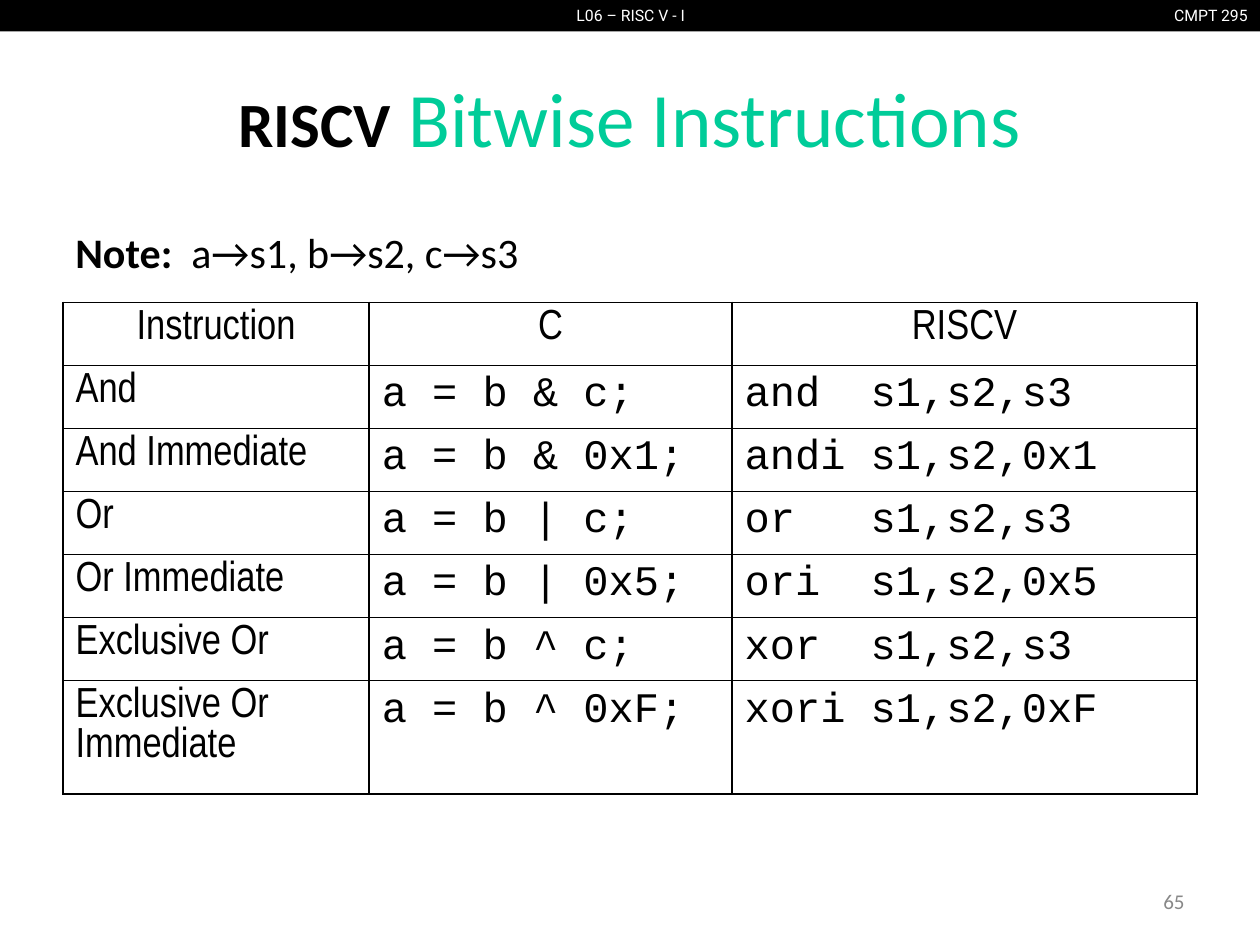
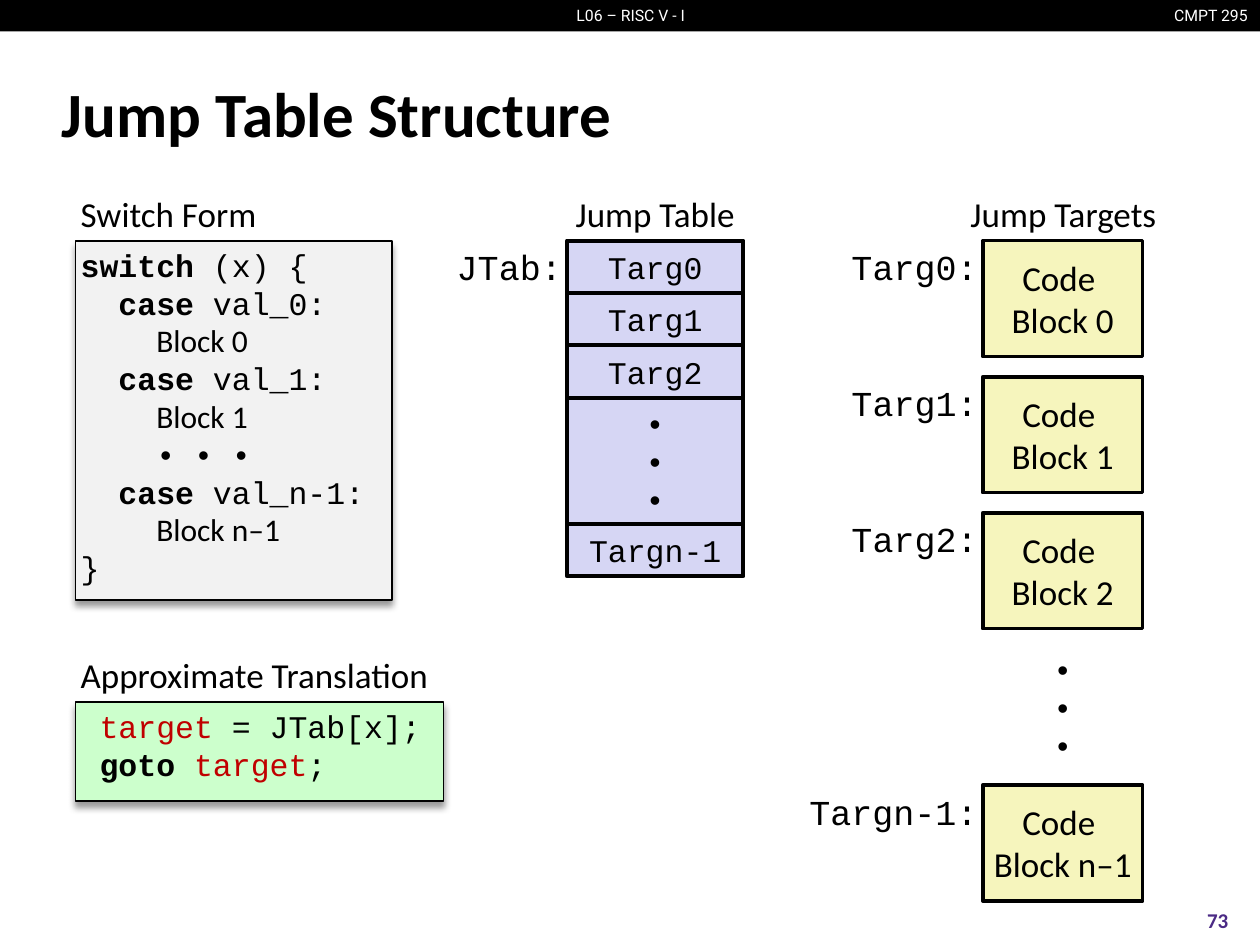
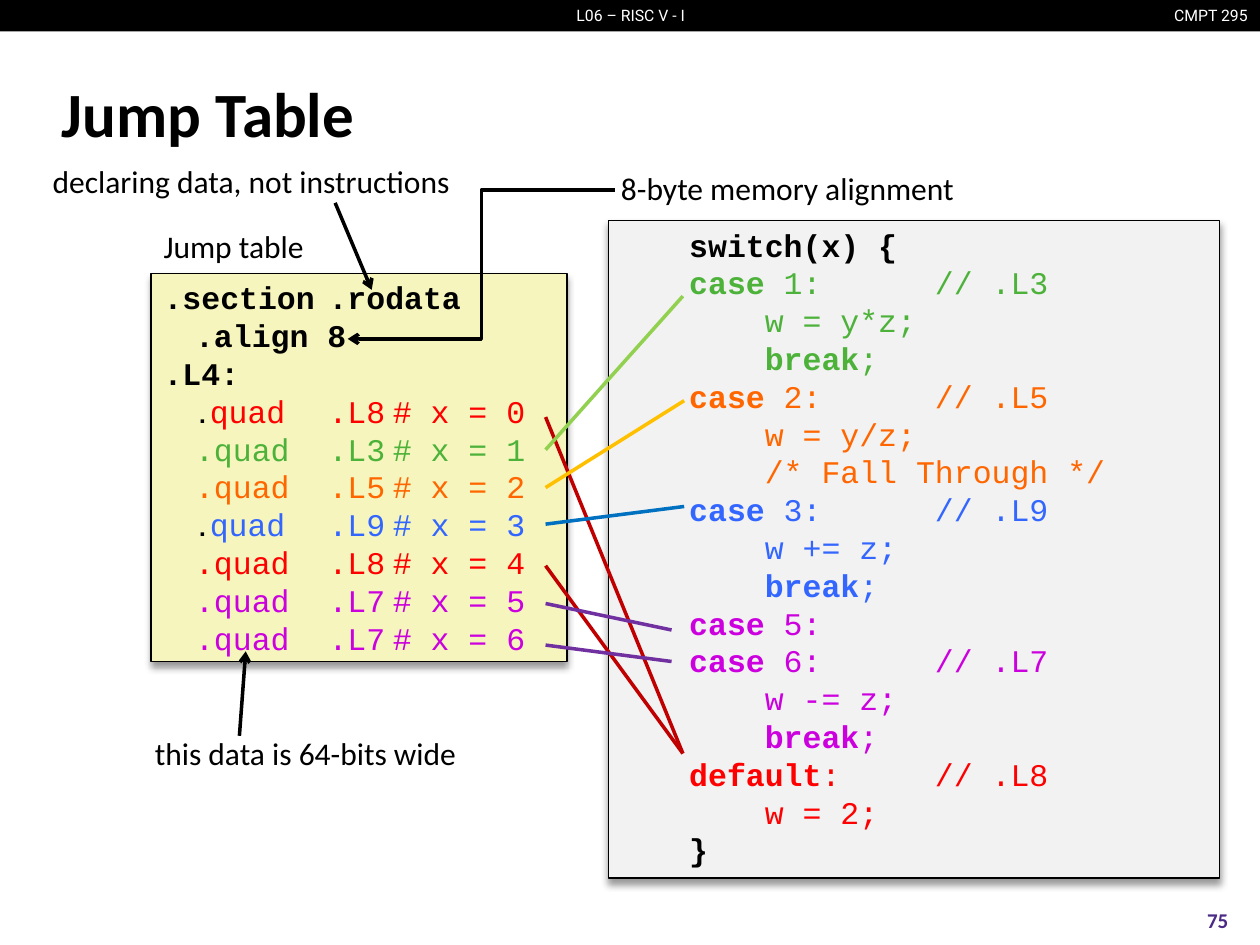
"""Build three lecture slides on bitwise instructions and jump tables."""
import pptx
import pptx.dml.color
import pptx.enum.shapes
import pptx.enum.text
import pptx.oxml
import pptx.oxml.ns
import pptx.util
from lxml import etree

Inches, Pt = pptx.util.Inches, pptx.util.Pt
ALIGN = pptx.enum.text.PP_ALIGN
ANCHOR = pptx.enum.text.MSO_ANCHOR
CONNECTOR = pptx.enum.shapes.MSO_CONNECTOR
WIDTH, HEIGHT = 10, 7.5
BAND_HEIGHT = 0.25
LABEL_HEIGHT = 0.42
TIGHT = (0.04, 0.04, 0.04, 0.04)
BODY, CODE, TABLE, BAND = "Calibri", "Courier New", "Arial Narrow", "Roboto"
COLORS = {
    "black": "000000", "white": "FFFFFF", "number": "888888", "purple number": "4B2A85",
    "title": "00CC99", "yellow box": "F6F5BD", "lilac box": "D6D6F4", "green box": "CCFFCC",
    "gray box": "F2F2F2", "target": "C00000", "red": "FF0000", "green": "4DB23A",
    "orange": "FF6600", "blue": "3366FF", "magenta": "CC00DF", "red line": "C00000",
    "green line": "92D050", "amber line": "FFC000", "blue line": "0070C0", "purple line": "7030A0",
}


def marked(text, **style):
    """Split text into runs, with the parts between backticks in bold."""
    pieces = text.split("`")
    return [(piece, {**style, "bold": index % 2 == 1}) for index, piece in enumerate(pieces) if piece]


BITWISE_ROWS = [
    ("Instruction", "C", "RISCV"),
    ("And", "a = b & c;", "and  s1,s2,s3"),
    ("And Immediate", "a = b & 0x1;", "andi s1,s2,0x1"),
    ("Or", "a = b | c;", "or   s1,s2,s3"),
    ("Or Immediate", "a = b | 0x5;", "ori  s1,s2,0x5"),
    ("Exclusive Or", "a = b ^ c;", "xor  s1,s2,s3"),
    ("Exclusive Or Immediate", "a = b ^ 0xF;", "xori s1,s2,0xF"),
]
BITWISE_COLUMNS = (2.43, 2.88, 3.69)

BLOCK_INDENT = ("    ", {})
SWITCH_FORM = [
    marked("`switch `(x) {"),
    marked("  `case` val_0:"),
    [BLOCK_INDENT, ("Block 0", {"font": BODY})],
    marked("  `case` val_1:"),
    [BLOCK_INDENT, ("Block 1", {"font": BODY})],
    marked("    •\u00a0•\u00a0•".replace("\u00a0", chr(160))),
    marked("  `case` val_n-1:"),
    [BLOCK_INDENT, ("Block n–1", {"font": BODY})],
    marked("}"),
]
TRANSLATION = [
    [(" ", {}), ("target", {"color": "target"}), (" = JTab[x];", {})],
    [*marked(" `goto `"), ("target", {"color": "target"}), (";", {})],
]
DOTS = ["•"] * 3
JUMP_ENTRIES = [(0, "0"), (1, "1"), (2, "2"), (None, None), (3, "n-1")]
CODE_BLOCKS = [(0, "0", "0"), (1, "1", "1"), (2, "2", "2"), (4, "n-1", "n–1")]
FORM_HEADINGS = [
    ("Switch Form", (0.6, 1.49, 1.52), ALIGN.LEFT),
    ("Approximate Translation", (0.6, 5.15, 3.1), ALIGN.LEFT),
    ("Jump Table", (4.5, 1.49, 1.4), ALIGN.CENTER),
    ("Jump Targets", (7.64, 1.49, 1.6), ALIGN.CENTER),
]

QUADS = [("L8", "red"), ("L3", "green"), ("L5", "orange"), ("L9", "blue"),
         ("L8", "red"), ("L7", "magenta"), ("L7", "magenta")]
BLACK_DOT_ROWS = (0, 3)
SECTION_TABS = (0.25, 1.31, 1.82)
SWITCH_CODE = [
    ("black", ["`switch(x) {`"]),
    ("green", ["`case` 1:      // .L3", "    w = y*z;", "    `break`;"]),
    ("orange", ["`case` 2:      // .L5", "    w = y/z;", "    /* Fall Through */"]),
    ("blue", ["`case` 3:      // .L9", "    w += z;", "    `break`;"]),
    ("magenta", ["`case` 5:", "`case` 6:      // .L7", "    w -= z;", "    `break`;"]),
    ("red", ["`default`:     // .L8", "    w = 2;"]),
    ("black", ["`}`"]),
]
QUAD_LINES = [
    (3.31, (5.42, 5.98), "red line"), (3.57, (5.42, 2.35), "green line"),
    (3.87, (5.43, 3.18), "amber line"), (4.16, (5.43, 4.02), "blue line"),
    (4.49, (5.42, 5.98), "red line"), (4.79, (5.33, 5), "purple line"),
    (5.12, (5.33, 5.25), "purple line"),
]
NOTES = [
    ("declaring data, not instructions", (0.32, 1.24, 3.51, 0.4)),
    ("8-byte memory alignment", (4.83, 1.29, 3, 0.4)),
    ("this data is 64-bits wide", (1.13, 5.78, 2.62, 0.4)),
]
NOTE_ARROWS = [
    (CONNECTOR.STRAIGHT, (2.66, 1.61), (2.95, 2.3)),
    (CONNECTOR.ELBOW, (4.88, 1.51), (2.76, 2.69)),
    (CONNECTOR.STRAIGHT, (1.9, 5.84), (1.95, 5.17)),
]


def color(name):
    return pptx.dml.color.RGBColor.from_string(COLORS[name])


def element(parent, tag, **attributes):
    child = etree.SubElement(parent, pptx.oxml.ns.qn(tag))
    for key, value in attributes.items():
        child.set(key, str(value))
    return child


def write(frame, paragraphs, font=BODY, size=18, align=ALIGN.LEFT, anchor=ANCHOR.TOP,
          insets=(0.1, 0.05, 0.1, 0.05), tabs=(), ink="black", wrap=True):
    """Fill a text frame; a paragraph is a string or a list of (text, style) runs."""
    frame.word_wrap = wrap
    frame.vertical_anchor = anchor
    frame.margin_left, frame.margin_top, frame.margin_right, frame.margin_bottom = map(Inches, insets)
    for index, runs in enumerate(paragraphs):
        paragraph = frame.paragraphs[0] if index == 0 else frame.add_paragraph()
        paragraph.alignment = align
        if tabs:
            tab_list = element(paragraph._p.get_or_add_pPr(), "a:tabLst")
            for position in tabs:
                element(tab_list, "a:tab", pos=Inches(position), algn="l")
        for text, style in [(runs, {})] if isinstance(runs, str) else runs:
            run = paragraph.add_run()
            run.text = text
            run.font.name = style.get("font", font)
            run.font.size = Pt(style.get("size", size))
            run.font.bold = style.get("bold", False)
            run.font.color.rgb = color(style.get("color", ink))


def add_text(slide, place, paragraphs, **style):
    box = slide.shapes.add_textbox(*map(Inches, place))
    write(box.text_frame, paragraphs, **style)
    return box


def add_box(slide, place, fill, paragraphs=(), line=None, shadow=False, **style):
    box = slide.shapes.add_shape(pptx.enum.shapes.MSO_SHAPE.RECTANGLE, *map(Inches, place))
    box.shadow.inherit = False
    box.fill.solid()
    box.fill.fore_color.rgb = color(fill)
    if line:
        box.line.color.rgb = color("black")
        box.line.width = Pt(line)
    else:
        box.line.fill.background()
    if shadow:
        effects = box.element.spPr.find(pptx.oxml.ns.qn("a:effectLst"))
        outer = element(effects, "a:outerShdw", blurRad=Pt(4), dist=Pt(3), dir=5400000, rotWithShape=0)
        element(element(outer, "a:srgbClr", val=COLORS["black"]), "a:alpha", val=40000)
    write(box.text_frame, paragraphs, **style)
    return box


def add_line(slide, start, end, ink="black", kind=CONNECTOR.STRAIGHT, arrow=False):
    connector = slide.shapes.add_connector(kind, *map(Inches, (*start, *end)))
    connector.line.color.rgb = color(ink)
    connector.line.width = Pt(2)
    if arrow:
        element(connector.line._get_or_add_ln(), "a:tailEnd", type="arrow")
    element(connector.element.spPr, "a:effectLst")


def add_band(slide, layout):
    """Draw the course band and move it to the layout that all slides share."""
    style = {"font": BAND, "size": 9, "ink": "white", "wrap": False}
    parts = [
        add_box(slide, (0, 0, WIDTH, BAND_HEIGHT), "black"),
        add_text(slide, (9.19, 0, 0.81, BAND_HEIGHT), ["CMPT 295"], align=ALIGN.RIGHT, **style),
        add_text(slide, (4.3, 0, 1.41, BAND_HEIGHT), ["L06 – RISC V - I"], align=ALIGN.CENTER, **style),
    ]
    for part in parts:
        layout.shapes.element.append(part.element)


def set_title(slide, runs, place=(0.39, 0.48, 9.19, 0.83), align=ALIGN.LEFT):
    title = slide.shapes.title
    title.left, title.top, title.width, title.height = map(Inches, place)
    write(title.text_frame, [runs], size=36, align=align, anchor=ANCHOR.MIDDLE)


def add_number(slide, number):
    add_text(slide, (9.33, 7.1, 0.67, 0.4), marked_lines(f"`{number}`"), size=12,
             ink="purple number", align=ALIGN.CENTER, anchor=ANCHOR.MIDDLE)


def marked_lines(*lines):
    return [marked(line) for line in lines]


def build_bitwise(slide):
    set_title(slide, [("RISCV", {"bold": True}), (" Bitwise Instructions", {"size": 44, "color": "title"})],
              (0.5, 0.3, 9, 1.25), ALIGN.CENTER)
    add_text(slide, (0.5, 1.75, 9, 1), marked_lines("`Note:`  a→s1, b→s2, c→s3"), size=24)
    add_text(slide, (7.17, 6.95, 2.33, 0.4), ["65"], size=12, ink="number",
             align=ALIGN.RIGHT, anchor=ANCHOR.MIDDLE)
    rows = len(BITWISE_ROWS)
    table = slide.shapes.add_table(rows, len(BITWISE_COLUMNS), *map(Inches, (0.5, 2.4, 9, 0.41 * rows))).table
    table.first_row = table.horz_banding = False
    for column, width in zip(table.columns, BITWISE_COLUMNS):
        column.width = Inches(width)
    for row_index, texts in enumerate(BITWISE_ROWS):
        for column_index, text in enumerate(texts):
            cell = table.cell(row_index, column_index)
            header = row_index == 0
            write(cell.text_frame, [text], font=TABLE if header or column_index == 0 else CODE,
                  size=24, align=ALIGN.CENTER if header else ALIGN.LEFT)
            cell.margin_left = cell.margin_right = Inches(0.1)
            cell.margin_top = cell.margin_bottom = Inches(0.05)
            properties = cell._tc.get_or_add_tcPr()
            for side in ("a:lnL", "a:lnR", "a:lnT", "a:lnB"):
                fill = element(element(properties, side, w=Pt(1)), "a:solidFill")
                element(fill, "a:srgbClr", val=COLORS["black"])
            cell.fill.background()


def build_structure(slide):
    set_title(slide, marked("`Jump Table Structure`"))
    add_number(slide, 73)
    top, pitch, entry_height, dots_height = 1.91, 1.08, 0.416, 1
    centered = {"align": ALIGN.CENTER, "anchor": ANCHOR.MIDDLE, "insets": TIGHT}
    label = {"font": CODE, "size": 20, "align": ALIGN.RIGHT, "insets": TIGHT}
    for row, target, block in CODE_BLOCKS:
        y = top + row * pitch
        add_box(slide, (7.8, y, 1.27, 0.92), "yellow box", ["Code ", f"Block {block}"], line=2, size=20, **centered)
        add_text(slide, (6.3, y, 1.5, LABEL_HEIGHT), [f"Targ{target}:"], **label)
    add_box(slide, (8.31, 5.11, 0.25, dots_height), "white", DOTS, font=CODE, **centered)
    y = top
    for row, target in JUMP_ENTRIES:
        height = dots_height if row is None else entry_height
        add_box(slide, (4.5, y, 1.4, height), "lilac box", DOTS if row is None else [f"Targ{target}"],
                line=2.25, font=CODE, **centered)
        y += height
    add_text(slide, (3.5, top, 1, LABEL_HEIGHT), ["JTab:"], **label)
    code = {"line": 1, "shadow": True, "font": CODE, "insets": TIGHT}
    add_box(slide, (0.6, 5.57, 2.92, 0.79), "green box", TRANSLATION, **code)
    add_box(slide, (0.6, top, 2.51, 2.85), "gray box", SWITCH_FORM, **code)
    for text, place, align in FORM_HEADINGS:
        add_text(slide, (*place, LABEL_HEIGHT), [text], size=20, align=align, insets=TIGHT)


def build_jump_table(slide):
    set_title(slide, marked("`Jump Table`"))
    add_number(slide, 75)
    section = marked_lines("`.section\t.rodata`", "`\t.align 8`", "`.L4:`")
    for value, (target, ink) in enumerate(QUADS):
        lead, word = ("\t.", "quad") if value in BLACK_DOT_ROWS else ("\t", ".quad")
        section.append([(lead, {"size": 14, "bold": True}),
                        (f"{word}\t.{target}\t# x = {value}", {"color": ink})])
    code = {"line": 1, "shadow": True, "font": CODE}
    add_box(slide, (1.2, 2.17, 3.3, 3.08), "yellow box", section, tabs=SECTION_TABS,
            insets=(0.1, 0.04, 0.1, 0.04), **code)
    add_text(slide, (1.2, 1.76, 3.3, LABEL_HEIGHT), ["Jump table"], insets=(0.1, 0.04, 0.04, 0.04))
    switch = [marked("    " + line, color=ink) for ink, lines in SWITCH_CODE for line in lines]
    add_box(slide, (4.83, 1.75, 4.85, 5.22), "gray box", switch, insets=TIGHT, **code)
    for y, end, ink in QUAD_LINES:
        add_line(slide, (4.33, y), end, ink)
    for text, place in NOTES:
        add_text(slide, place, [text])
    for kind, start, end in NOTE_ARROWS:
        add_line(slide, start, end, kind=kind, arrow=True)


def main():
    presentation = pptx.Presentation()
    presentation.slide_width, presentation.slide_height = Inches(WIDTH), Inches(HEIGHT)
    layout = presentation.slide_layouts[5]
    builders = (build_bitwise, build_structure, build_jump_table)
    slides = [presentation.slides.add_slide(layout) for builder in builders]
    add_band(slides[0], layout)
    for builder, slide in zip(builders, slides):
        builder(slide)
    presentation.save("out.pptx")


if __name__ == "__main__":
    main()
